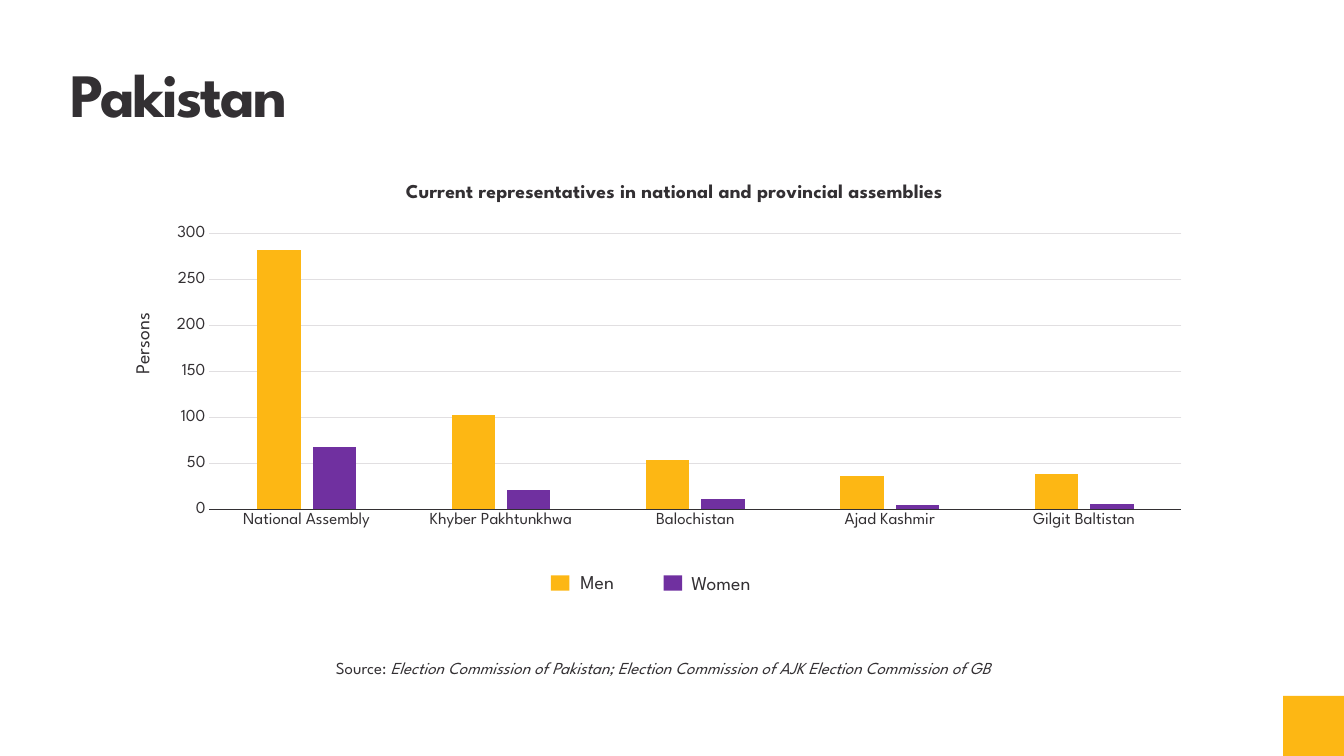
from dataclasses import dataclass
from lxml.etree import SubElement
from pptx import Presentation
from pptx.chart.data import CategoryChartData as ChartData
from pptx.dml.color import RGBColor as RGB
from pptx.enum.chart import XL_CHART_TYPE as Kind, XL_TICK_MARK as Tick
from pptx.enum.shapes import MSO_SHAPE as Form
from pptx.enum.text import MSO_ANCHOR as Anchor, PP_ALIGN as Align
from pptx.oxml.ns import qn
from pptx.util import Pt


@dataclass(frozen=True)
class Theme:
    face: str = "League Spartan"
    ink: str = "333033"
    grid: str = "E1DFE1"
    gold: str = "FDB714"
    plum: str = "7030A0"
    head: int = 44
    label: int = 14
    small: int = 12
    base: int = 10


@dataclass(frozen=True)
class Box:
    left: float
    top: float
    width: float
    height: float

    def pts(self) -> tuple:
        return tuple(Pt(v) for v in (self.left, self.top, self.width, self.height))


@dataclass(frozen=True)
class Group:
    name: str
    hue: str
    counts: tuple
    swatch: Box
    label: Box


THEME = Theme()
PLACES = ("National Assembly", "Khyber Pakhtunkhwa", "Balochistan",
          "Ajad Kashmir", "Gilgit Baltistan")
GROUPS = (
    Group("Men", THEME.gold, (282, 103, 54, 36, 38),
          Box(393.5, 411, 13.3, 11), Box(407.5, 403.2, 62, 24.5)),
    Group("Women", THEME.plum, (68, 21, 11, 5, 6),
          Box(474, 411, 13.3, 11), Box(486.7, 404.6, 79, 24.5)),
)


def put(item, **values) -> None:
    for name, value in values.items():
        setattr(item, name, value)


def ink(font, size: int, **more) -> None:
    """Give a font the slide's face and text colour."""
    put(font, name=THEME.face, size=Pt(size), **more)
    font.color.rgb = RGB.from_string(THEME.ink)


def paint(fill, hue: str) -> None:
    fill.solid()
    fill.fore_color.rgb = RGB.from_string(hue)


def block(shapes, box: Box, hue: str) -> None:
    """Draw a plain filled rectangle."""
    shape = shapes.add_shape(Form.RECTANGLE, *box.pts())
    shape.shadow.inherit = False
    paint(shape.fill, hue)
    shape.line.fill.background()


def write(shapes, box: Box, size: int, *parts: tuple):
    """Add a text box of (text, italic) runs and return its paragraph."""
    frame = shapes.add_textbox(*box.pts()).text_frame
    frame.word_wrap = True
    para = frame.paragraphs[0]
    for text, slant in parts:
        run = para.add_run()
        run.text = text
        ink(run.font, size, italic=slant)
    return para


def place(host, index: int, **values) -> None:
    """Set a manual layout, in fractions of the chart, on a chart part."""
    for old in host.findall(qn("c:layout")):
        host.remove(old)
    layout = SubElement(host, qn("c:layout"))
    manual = SubElement(layout, qn("c:manualLayout"))
    for name, value in values.items():
        SubElement(manual, qn(f"c:{name}")).set("val", str(value))
    host.insert(index, layout)


def entitle(owner, text: str, bold: bool, x: float, y: float):
    """Give a chart or axis a title at a fixed spot; return its text frame."""
    owner.has_title = True
    title = owner.chart_title if hasattr(owner, "chart_title") else owner.axis_title
    frame = title.text_frame
    frame.text = text
    ink(frame.paragraphs[0].runs[0].font, THEME.label, bold=bold)
    place(frame._txBody.getparent().getparent(), 1,
          xMode="edge", yMode="edge", x=x, y=y)
    return frame


def plot(shapes) -> None:
    data = ChartData()
    data.categories = PLACES
    for group in GROUPS:
        data.add_series(group.name, group.counts)
    box = Box(85, 113.8, 778.3, 355.7)
    chart = shapes.add_chart(Kind.COLUMN_CLUSTERED, *box.pts(), data).chart
    chart.has_legend = False
    ink(chart.font, THEME.base)
    entitle(chart, "Current representatives in national and provincial assemblies",
            True, 0.26, 0.04)
    place(chart.element.find(".//" + qn("c:plotArea")), 0, layoutTarget="inner",
          xMode="edge", yMode="edge", x=0.083, y=0.149, w=0.892, h=0.554)

    bars = chart.plots[0]
    put(bars, gap_width=219, overlap=-27, vary_by_categories=False)
    for series, group in zip(bars.series, GROUPS):
        paint(series.format.fill, group.hue)

    across, up = chart.category_axis, chart.value_axis
    for axis in (across, up):
        put(axis, major_tick_mark=Tick.NONE, minor_tick_mark=Tick.NONE)
        ink(axis.tick_labels.font, THEME.small)
    put(up, minimum_scale=0, maximum_scale=300, major_unit=50)
    up.format.line.fill.background()
    for line, hue, width in ((across.format.line, THEME.ink, 1),
                             (up.major_gridlines.format.line, THEME.grid, 0.75)):
        paint(line.fill, hue)
        line.width = Pt(width)
    frame = entitle(up, "Persons", False, 0.01, 0.3)
    turn = frame._txBody.find(qn("a:bodyPr"))
    for name, value in {"rot": "-5400000", "vert": "horz"}.items():
        turn.set(name, value)


def head(title) -> None:
    box = Box(43.2, 38.9, 873.4, 54.7)
    put(title, **dict(zip(("left", "top", "width", "height"), box.pts())))
    frame = title.text_frame
    put(frame, text="Pakistan", vertical_anchor=Anchor.MIDDLE, word_wrap=True)
    para = frame.paragraphs[0]
    para.alignment = Align.LEFT
    font = para.runs[0].font
    ink(font, THEME.head, bold=True)
    font._element.set("spc", "-150")


def main() -> None:
    deck = Presentation()
    put(deck, slide_width=Pt(960), slide_height=Pt(540))
    slide = deck.slides.add_slide(deck.slide_layouts[5])
    shapes = slide.shapes
    head(shapes.title)
    block(shapes, Box(916.6, 497, 43.4, 43), THEME.gold)
    plot(shapes)
    legend = shapes.add_group_shape().shapes
    for group in GROUPS:
        block(legend, group.swatch, group.hue)
        write(legend, group.label, THEME.label, (group.name, False))
    source = write(
        shapes, Box(139.7, 465.1, 668.9, 21.6), THEME.small, ("Source: ", False),
        ("Election Commission of Pakistan; Election Commission of AJK "
         "Election Commission of GB", True))
    put(source, alignment=Align.CENTER, line_spacing=1.07, space_after=Pt(8))
    deck.save("out.pptx")


if __name__ == "__main__":
    main()
